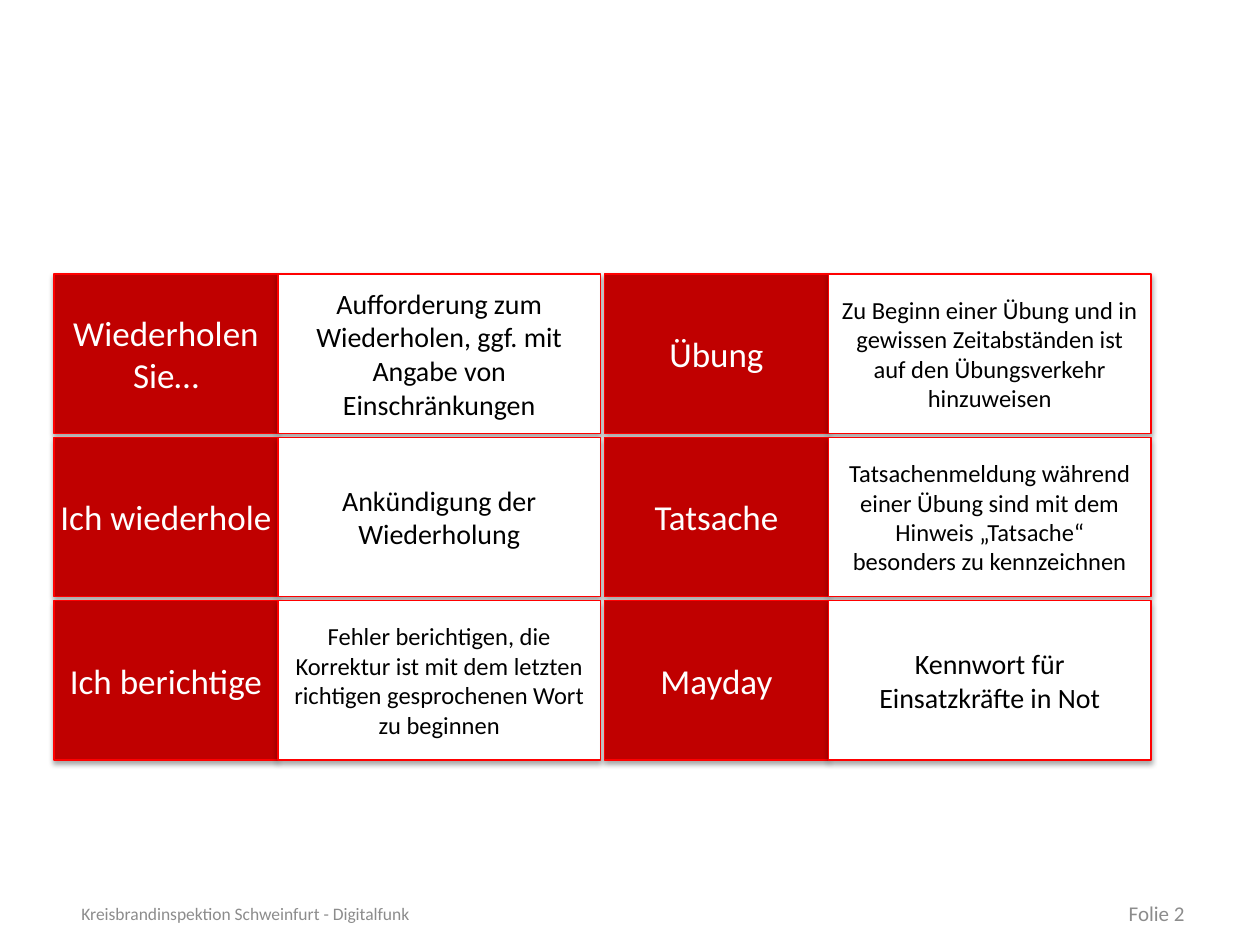
from lxml.etree import SubElement
from pptx import Presentation
from pptx.dml.color import RGBColor
from pptx.enum.shapes import MSO_SHAPE
from pptx.enum.text import MSO_ANCHOR, PP_ALIGN
from pptx.oxml.ns import qn
from pptx.util import Emu, Pt

WIDTH, HEIGHT = 1260, 945
RED, EDGE, WHITE, BLACK, GREY = "C00000", "FF0000", "FFFFFF", "000000", "8C8C8C"

# Each row holds the left and the right card: term, meaning, size of the meaning
ROWS = [
    [("Wiederholen Sie…",
      "Aufforderung zum Wiederholen, ggf. mit Angabe von Einschränkungen", 16),
     ("Übung",
      "Zu Beginn einer Übung und in gewissen Zeitabständen ist "
      "auf den Übungsverkehr hinzuweisen", 14)],
    [("Ich wiederhole", "Ankündigung der Wiederholung", 16),
     ("Tatsache",
      "Tatsachenmeldung während einer Übung sind mit dem Hinweis "
      "„Tatsache“ besonders zu kennzeichnen", 14)],
    [("Ich berichtige",
      "Fehler berichtigen, die Korrektur ist mit dem letzten "
      "richtigen gesprochenen Wort zu beginnen", 14),
     ("Mayday", "Kennwort für Einsatzkräfte in Not", 16)],
]


def px(n):
    return Emu(round(n * 914400 / 126))


def color(code):
    return RGBColor.from_string(code)


def write(shape, text, size, ink, align=PP_ALIGN.CENTER, inset=None):
    frame = shape.text_frame
    frame.word_wrap = True
    frame.vertical_anchor = MSO_ANCHOR.MIDDLE
    if inset is not None:
        frame.margin_left = frame.margin_right = px(inset)
        frame.margin_top = frame.margin_bottom = px(inset)
    para = frame.paragraphs[0]
    para.alignment = align
    run = para.add_run()
    run.text = text
    run.font.name = "Calibri"
    run.font.size = Pt(size)
    run.font.color.rgb = color(ink)


def shade(shape):
    """Give the shape a soft shadow that falls straight down."""
    shape.shadow.inherit = False
    effects = shape._element.spPr.find(qn("a:effectLst"))
    outer = SubElement(effects, qn("a:outerShdw"), blurRad=str(Pt(3.1)),
                       dist=str(Pt(1.8)), dir="5400000", rotWithShape="0")
    tint = SubElement(outer, qn("a:srgbClr"), val=BLACK)
    SubElement(tint, qn("a:alpha"), val="35000")


def panel(group, box, fill):
    shape = group.shapes.add_shape(MSO_SHAPE.RECTANGLE, *map(px, box))
    shape.fill.solid()
    shape.fill.fore_color.rgb = color(fill)
    shape.line.color.rgb = color(EDGE)
    shape.line.width = Pt(0.75)
    shade(shape)
    return shape


def card(slide, box, term, meaning, size):
    left, top, width, height = box
    split = 224
    group = slide.shapes.add_group_shape()
    label = panel(group, (left, top, split, height), RED)
    write(label, term, 20, WHITE, inset=5)
    body = panel(group, (left + split, top, width - split, height), WHITE)
    write(body, meaning, size, BLACK)


def cards(slide, box):
    left, top, width, height = box
    gap = 4
    wide = (width - gap) / 2
    high = (height - gap * (len(ROWS) - 1)) / len(ROWS)
    for i, row in enumerate(ROWS):
        for j, entry in enumerate(row):
            spot = (left + j * (wide + gap), top + i * (high + gap), wide, high)
            card(slide, spot, *entry)


def footer(slide, box):
    left, top, width, height = box
    note, page = 761, 294
    parts = [
        (left, note, "Kreisbrandinspektion Schweinfurt - Digitalfunk", 10, PP_ALIGN.LEFT),
        (left + width - page, page, "Folie 2", 12, PP_ALIGN.RIGHT),
    ]
    for start, span, text, size, align in parts:
        area = slide.shapes.add_textbox(px(start), px(top), px(span), px(height))
        write(area, text, size, GREY, align=align)


def main():
    deck = Presentation()
    deck.slide_width, deck.slide_height = px(WIDTH), px(HEIGHT)
    slide = deck.slides.add_slide(deck.slide_layouts[6])
    footer(slide, (69, 901, 1128, 25))
    cards(slide, (54, 274, 1097, 486))
    deck.save("out.pptx")


if __name__ == "__main__":
    main()
